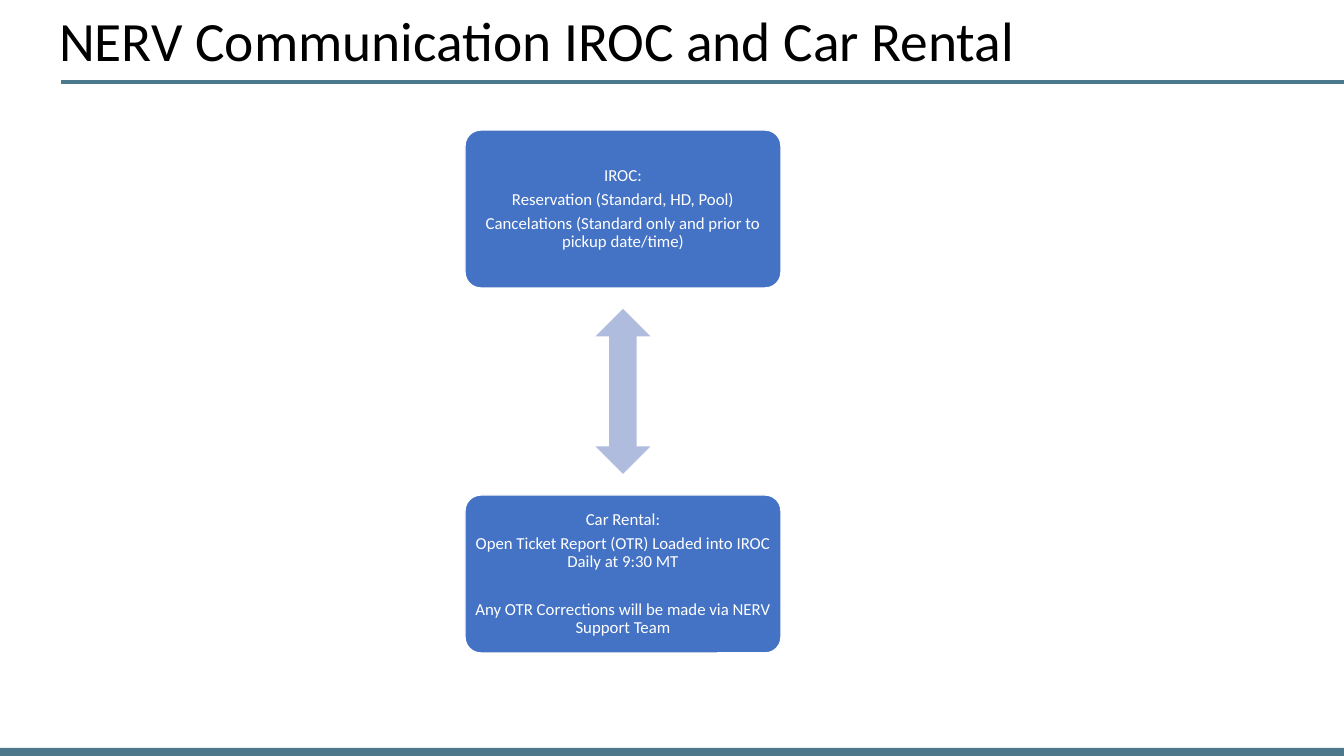
import dataclasses

import pptx
import pptx.dml.color
import pptx.enum.shapes
import pptx.enum.text
import pptx.oxml
import pptx.oxml.ns
import pptx.util

PX = 914400 / 100.8
SHAPES = pptx.enum.shapes.MSO_SHAPE
ALIGN = pptx.enum.text.PP_ALIGN
ANCHOR = pptx.enum.text.MSO_ANCHOR


@dataclasses.dataclass(frozen=True)
class Theme:
    font: str = "Calibri"
    title_size: float = 39.6
    body_size: float = 12
    line_spacing: float = 0.9
    space_after: float = 4.2
    section_space: float = 21.6
    black: str = "000000"
    white: str = "FFFFFF"
    box: str = "4472C4"
    arrow: str = "B0BCDE"
    rule: str = "4B788B"
    footer: str = "4D788B"


THEME = Theme()
PAGE_WIDTH, PAGE_HEIGHT = 1344, 756
BOX_LEFT, BOX_WIDTH, BOX_HEIGHT = 465, 316, 158
BOX_TOP, BOX_PITCH = 130, 365
ARROW_WIDTH, ARROW_HEIGHT = 55, 165

# Each system lists its paragraphs with the space that follows them.
SYSTEMS = [
    [
        ("IROC:", THEME.space_after),
        ("Reservation (Standard, HD, Pool)", THEME.space_after),
        ("Cancelations (Standard only and prior to pickup date/time)", THEME.space_after),
    ],
    [
        ("Car Rental:", THEME.space_after),
        ("Open Ticket Report (OTR) Loaded into IROC Daily at 9:30 MT", THEME.section_space),
        ("Any OTR Corrections will be made via NERV Support Team", THEME.space_after),
    ],
]


def px(length):
    return pptx.util.Emu(round(length * PX))


def rgb(code):
    return pptx.dml.color.RGBColor.from_string(code)


def apply_format(target, values):
    for name, value in values.items():
        setattr(target, name, value)


def format_text(para, size, color, align, space_after=0):
    apply_format(para, {
        "alignment": align,
        "line_spacing": THEME.line_spacing,
        "space_before": pptx.util.Pt(0),
        "space_after": pptx.util.Pt(space_after),
    })
    apply_format(para.font, {"name": THEME.font, "size": pptx.util.Pt(size)})
    para.font.color.rgb = rgb(color)


def add_title(page, text):
    title = page.shapes.title
    apply_format(title, {"left": px(49), "top": px(0), "width": px(1068), "height": px(79)})
    frame = title.text_frame
    frame.text = text
    apply_format(frame, {
        "vertical_anchor": ANCHOR.BOTTOM,
        "auto_size": pptx.enum.text.MSO_AUTO_SIZE.NONE,
        "word_wrap": True,
    })
    format_text(frame.paragraphs[0], THEME.title_size, THEME.black, ALIGN.LEFT)


def add_shape(page, kind, left, top, width, height, fill, adjustments=()):
    shape = page.shapes.add_shape(kind, px(left), px(top), px(width), px(height))
    for index, value in enumerate(adjustments):
        shape.adjustments[index] = value
    shape.shadow.inherit = False
    shape.fill.solid()
    shape.fill.fore_color.rgb = rgb(fill)
    shape.line.fill.background()
    return shape


def add_system_box(page, top, paragraphs):
    box = add_shape(page, SHAPES.ROUNDED_RECTANGLE, BOX_LEFT, top,
                    BOX_WIDTH, BOX_HEIGHT, THEME.box, [0.1])
    box.line.color.rgb = rgb(THEME.white)
    box.line.width = pptx.util.Pt(1)
    frame = box.text_frame
    apply_format(frame, {"word_wrap": True, "vertical_anchor": ANCHOR.MIDDLE})
    for side in ("left", "right", "top", "bottom"):
        setattr(frame, f"margin_{side}", px(5))
    for index, (text, space_after) in enumerate(paragraphs):
        para = frame.add_paragraph() if index else frame.paragraphs[0]
        para.text = text
        format_text(para, THEME.body_size, THEME.white, ALIGN.CENTER, space_after)


def add_exchange_arrow(page):
    """Centre the two-way arrow in the gap between the system boxes."""
    left = BOX_LEFT + (BOX_WIDTH - ARROW_WIDTH) / 2
    top = BOX_TOP + (BOX_PITCH + BOX_HEIGHT - ARROW_HEIGHT) / 2
    arrow = add_shape(page, SHAPES.UP_DOWN_ARROW, left, top,
                      ARROW_WIDTH, ARROW_HEIGHT, THEME.arrow)
    arrow.adjustments[0] = 0.6
    arrow.adjustments[1] = 0.5


def add_title_rule(page):
    rule = page.shapes.add_connector(
        pptx.enum.shapes.MSO_CONNECTOR.STRAIGHT, px(61), px(82), px(PAGE_WIDTH), px(82))
    rule.line.color.rgb = rgb(THEME.rule)
    rule.line.width = pptx.util.Pt(2.25)
    properties = rule._element.spPr
    properties.append(pptx.oxml.parse_xml(
        f"<a:effectLst {pptx.oxml.ns.nsdecls('a')}/>"))


def main():
    deck = pptx.Presentation()
    deck.slide_width, deck.slide_height = px(PAGE_WIDTH), px(PAGE_HEIGHT)
    page = deck.slides.add_slide(deck.slide_layouts[5])
    add_shape(page, SHAPES.RECTANGLE, 0, 748, PAGE_WIDTH, PAGE_HEIGHT - 748, THEME.footer)
    add_title_rule(page)
    add_title(page, "NERV Communication IROC and Car Rental")
    for index, paragraphs in enumerate(SYSTEMS):
        add_system_box(page, BOX_TOP + index * BOX_PITCH, paragraphs)
    add_exchange_arrow(page)
    deck.save("out.pptx")


if __name__ == "__main__":
    main()
